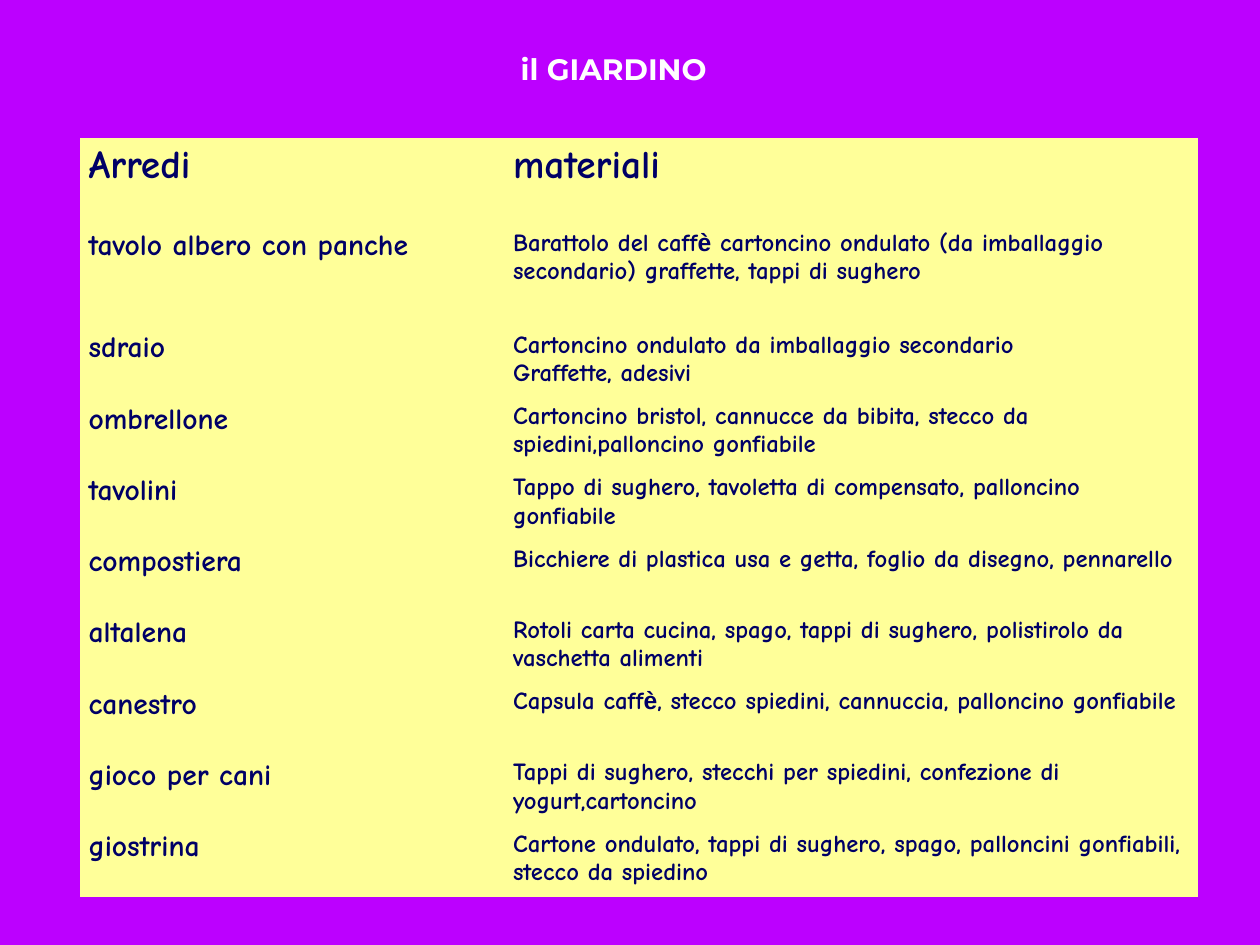
"""Build the garden slide: a title and a table of furnishings and materials."""
import pptx
import pptx.oxml
import pptx.oxml.ns
import pptx.util
from lxml import etree
from pptx.dml.color import RGBColor
from pptx.enum.text import MSO_ANCHOR, PP_ALIGN

TITLE = "il GIARDINO"
ROWS = [
    ("Arredi", "materiali"),
    ("tavolo albero con panche",
     "Barattolo del caffè cartoncino ondulato (da imballaggio secondario) graffette, tappi di sughero"),
    ("sdraio", "Cartoncino ondulato da imballaggio secondario\nGraffette, adesivi"),
    ("ombrellone",
     "Cartoncino bristol, cannucce da bibita, stecco da spiedini,palloncino gonfiabile"),
    ("tavolini", "Tappo di sughero, tavoletta di compensato, palloncino gonfiabile"),
    ("compostiera", "Bicchiere di plastica usa e getta, foglio da disegno, pennarello"),
    ("altalena", "Rotoli carta cucina, spago, tappi di sughero, polistirolo da vaschetta alimenti"),
    ("canestro", "Capsula caffè, stecco spiedini, cannuccia, palloncino gonfiabile"),
    ("gioco per cani", "Tappi di sughero, stecchi per spiedini, confezione di yogurt,cartoncino"),
    ("giostrina",
     "Cartone ondulato, tappi di sughero, spago, palloncini gonfiabili, stecco da spiedino"),
]

PURPLE = RGBColor(0xBC, 0x00, 0xFF)
YELLOW = RGBColor(0xFF, 0xFF, 0x99)
NAVY = RGBColor(0x00, 0x00, 0x66)
WHITE = RGBColor(0xFF, 0xFF, 0xFF)

SIZE = (14.22, 10.67)
HEAD = (0.45, 0.52, 12.95, 0.61)
GRID = (0.9, 1.56, 12.62, 8.57)
COLS = (4.79, 7.83)
TOP_ROWS = (0.98, 1.15)
HEAD_PT, BODY_PT = 32, (24, 20)
ACCENT = "è"
EDGES = ("a:lnL", "a:lnR", "a:lnT", "a:lnB")


def inch(vals):
    return [pptx.util.Inches(val) for val in vals]


def style(item, form):
    for key, val in form.items():
        setattr(item, key, val)


def add_run(para, text, color, **form):
    run = para.add_run()
    run.text = text
    style(run.font, form)
    run.font.color.rgb = color


def split(text):
    """Return the pieces of a line, each accent standing alone."""
    start, mark, rest = text.partition(ACCENT)
    return [part for part in (start, mark, rest) if part]


def add_title(slide):
    title = slide.shapes.title
    style(title, dict(zip(("left", "top", "width", "height"), inch(HEAD))))
    style(title.text_frame, {"word_wrap": False, "vertical_anchor": MSO_ANCHOR.TOP})
    para = title.text_frame.paragraphs[0]
    para.alignment = PP_ALIGN.CENTER
    add_run(para, TITLE, WHITE, name="Montserrat", size=pptx.util.Pt(24), bold=True)


def clear_edges(cell):
    props = cell._tc.get_or_add_tcPr()
    for spot, edge in enumerate(EDGES):
        line = etree.Element(pptx.oxml.ns.qn(edge), w="0")
        etree.SubElement(line, pptx.oxml.ns.qn("a:noFill"))
        props.insert(spot, line)


def fill_cell(cell, text, size):
    cell.fill.solid()
    cell.fill.fore_color.rgb = YELLOW
    clear_edges(cell)
    frame = cell.text_frame
    for num, line in enumerate(text.split("\n")):
        para = frame.add_paragraph() if num else frame.paragraphs[0]
        for part in split(line):
            font = "Arial" if part == ACCENT else "Comic Neue"
            add_run(para, part, NAVY, name=font, size=pptx.util.Pt(size), bold=True)


def add_grid(slide):
    table = slide.shapes.add_table(len(ROWS), len(COLS), *inch(GRID)).table
    style(table, {"first_row": False, "horz_banding": False})
    for col, width in zip(table.columns, inch(COLS)):
        col.width = width
    count = len(ROWS) - len(TOP_ROWS)
    rest = (GRID[3] - sum(TOP_ROWS)) / count
    for row, height in zip(table.rows, inch(TOP_ROWS + (rest,) * count)):
        row.height = height
    for r, texts in enumerate(ROWS):
        for c, text in enumerate(texts):
            fill_cell(table.cell(r, c), text, BODY_PT[c] if r else HEAD_PT)


def main():
    deck = pptx.Presentation()
    deck.slide_width, deck.slide_height = inch(SIZE)
    slide = deck.slides.add_slide(deck.slide_layouts[5])
    slide.background.fill.solid()
    slide.background.fill.fore_color.rgb = PURPLE
    add_title(slide)
    add_grid(slide)
    deck.save("out.pptx")


if __name__ == "__main__":
    main()
